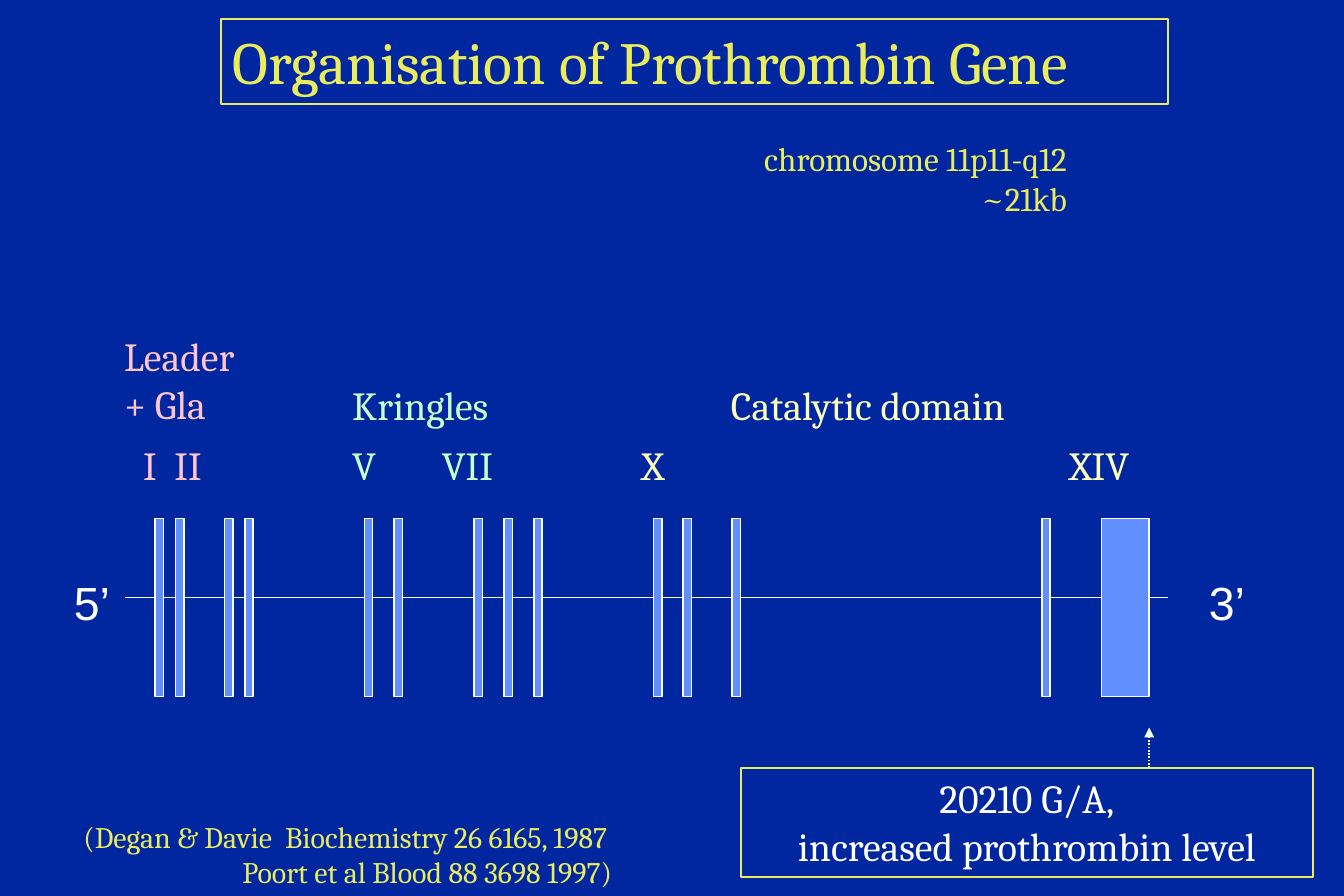
from dataclasses import dataclass

from lxml import etree
from pptx import Presentation
from pptx import util as u
from pptx.dml.color import RGBColor
from pptx.enum import dml, shapes, text
from pptx.oxml import ns

PX = 9144  # EMU per px, 100 px to the inch

NAVY = RGBColor(0x00, 0x27, 0x9F)
BLUE = RGBColor(0x61, 0x8F, 0xFD)
WHITE = RGBColor(0xFF, 0xFF, 0xFF)
YELLOW = RGBColor(0xEA, 0xEC, 0x5E)
CREAM = RGBColor(0xFC, 0xFE, 0xB9)
PINK = RGBColor(0xFF, 0xC5, 0xCF)
GREEN = RGBColor(0xC8, 0xFE, 0xC8)

LEFT, CENTER, RIGHT = text.PP_ALIGN.LEFT, text.PP_ALIGN.CENTER, text.PP_ALIGN.RIGHT

EXON_TOP, EXON_HEIGHT, EXON_WIDTH = 434, 149, 7
EXON_LEFTS = (130, 147, 188, 205, 305, 330, 397, 422, 447, 547, 572, 613, 872)
LAST_EXON_LEFT, LAST_EXON_WIDTH = 922, 40
GENE_Y = 500
NUMERAL_TOP, DOMAIN_TOP = 364, 314


@dataclass
class Label:
    text: str
    x: int
    y: int
    w: int
    h: int
    color: RGBColor
    size: int = 24
    font: str = "Cambria"
    align: text.PP_ALIGN = LEFT
    framed: bool = False
    last_indent: int = 0


LABELS = (
    Label("5’", 52, 476, 72, 58, WHITE, 28, "Arial"),
    Label("3’", 1002, 476, 72, 58, WHITE, 28, "Arial"),
    Label("I  II", 110, NUMERAL_TOP, 71, 51, PINK),
    Label("V", 285, NUMERAL_TOP, 45, 51, GREEN),
    Label("VII", 360, NUMERAL_TOP, 68, 51, GREEN),
    Label("X", 527, NUMERAL_TOP, 45, 51, CREAM),
    Label("XIV", 885, NUMERAL_TOP, 81, 51, CREAM),
    Label("Leader\n+ Gla", 94, 273, 120, 90, PINK),
    Label("Kringles", 285, DOMAIN_TOP, 135, 50, GREEN),
    Label("Catalytic domain", 602, DOMAIN_TOP, 249, 51, CREAM),
    Label("Organisation of Prothrombin Gene", 185, 16, 793, 71, YELLOW, 36, framed=True),
    Label("chromosome 11p11-q12\n~21kb", 611, 111, 292, 78, YELLOW, 20, align=RIGHT),
    Label("20210 G/A,\nincreased prothrombin level", 620, 643, 479, 91, WHITE,
          align=CENTER, framed=True),
    Label("(Degan & Davie  Biochemistry 26 6165, 1987\nPoort et al Blood 88 3698 1997)",
          60, 680, 482, 70, YELLOW, 18, last_indent=133),
)


def add_line(s, x1: int, y1: int, x2: int, y2: int):
    line = s.shapes.add_connector(
        shapes.MSO_CONNECTOR.STRAIGHT, x1 * PX, y1 * PX, x2 * PX, y2 * PX)
    line.line.color.rgb = WHITE
    line.line.width = u.Pt(1)
    etree.SubElement(line._element.spPr, ns.qn("a:effectLst"))
    return line


def add_mutation_arrow(s) -> None:
    arrow = add_line(s, 962, 609, 962, 643)
    arrow.line.dash_style = dml.MSO_LINE.ROUND_DOT
    ln = arrow.line._get_or_add_ln()
    etree.SubElement(ln, ns.qn("a:headEnd"), type="triangle")


def add_exon(s, x: int, w: int) -> None:
    sp = s.shapes.add_shape(shapes.MSO_SHAPE.RECTANGLE,
                            x * PX, EXON_TOP * PX, w * PX, EXON_HEIGHT * PX)
    sp.shadow.inherit = False
    sp.fill.solid()
    sp.fill.fore_color.rgb = BLUE
    sp.line.color.rgb = WHITE
    sp.line.width = u.Pt(1)


def add_label(s, label: Label) -> None:
    sp = s.shapes.add_textbox(label.x * PX, label.y * PX, label.w * PX, label.h * PX)
    if label.framed:
        sp.line.color.rgb = YELLOW
        sp.line.width = u.Pt(1)
    tf = sp.text_frame
    tf.word_wrap = label.framed
    tf.auto_size = text.MSO_AUTO_SIZE.SHAPE_TO_FIT_TEXT
    tf.text = label.text
    for p in tf.paragraphs:
        p.alignment = label.align
        for r in p.runs:
            r.font.name = label.font
            r.font.size = u.Pt(label.size)
            r.font.color.rgb = label.color
    if label.last_indent:
        p_pr = tf.paragraphs[-1]._p.get_or_add_pPr()
        p_pr.set("marL", str(label.last_indent * PX))


def main() -> None:
    prs = Presentation()
    prs.slide_width, prs.slide_height = 1125 * PX, 750 * PX
    s = prs.slides.add_slide(prs.slide_layouts[6])
    s.background.fill.solid()
    s.background.fill.fore_color.rgb = NAVY

    add_line(s, 105, GENE_Y, 978, GENE_Y)
    for x in EXON_LEFTS:
        add_exon(s, x, EXON_WIDTH)
    add_exon(s, LAST_EXON_LEFT, LAST_EXON_WIDTH)
    add_mutation_arrow(s)
    for label in LABELS:
        add_label(s, label)
    prs.save("out.pptx")


if __name__ == "__main__":
    main()
